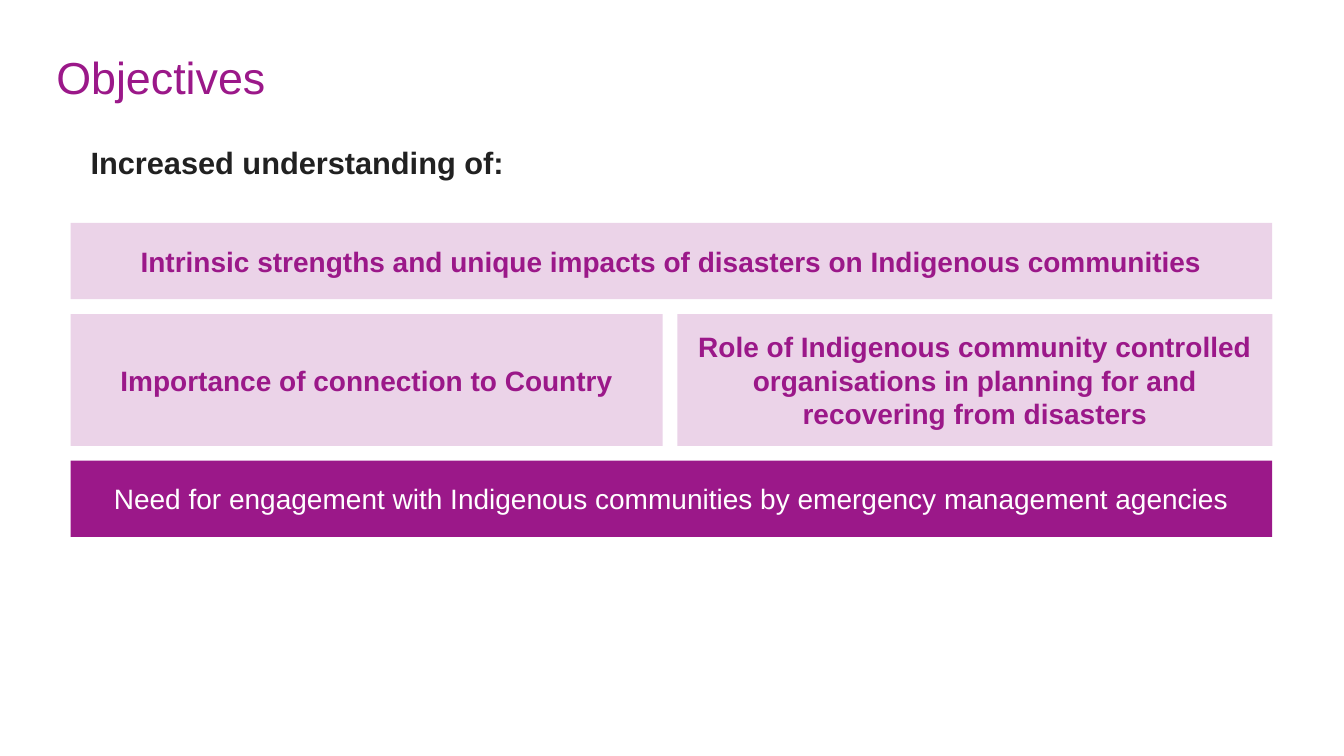
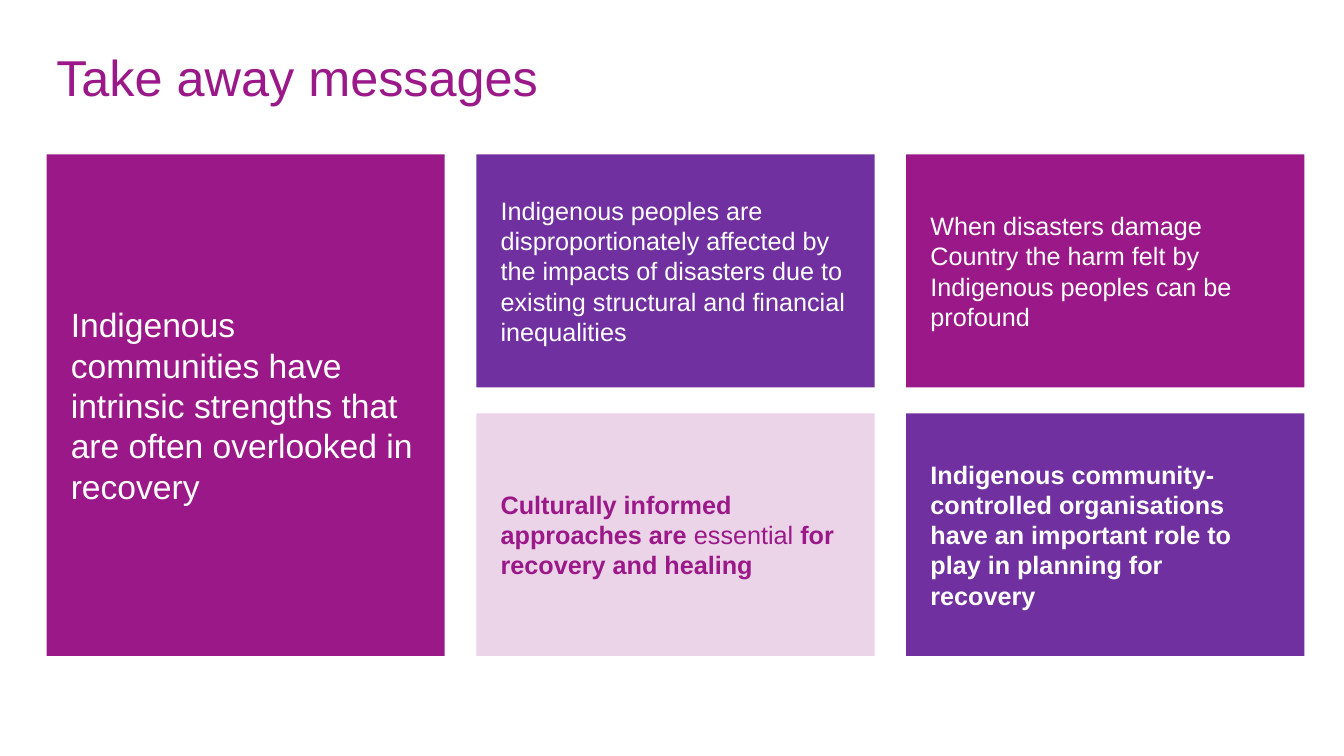
from pptx import Presentation
from pptx.dml.color import RGBColor
from pptx.enum.shapes import MSO_SHAPE
from pptx.enum.text import MSO_ANCHOR, MSO_AUTO_SIZE, PP_ALIGN
from pptx.util import Pt

RECT = MSO_SHAPE.RECTANGLE
MIDDLE = MSO_ANCHOR.MIDDLE
LEFT, CENTER = PP_ALIGN.LEFT, PP_ALIGN.CENTER
NO_FIT = MSO_AUTO_SIZE.NONE
FONT = "Arial"
MAGENTA, PURPLE, PINK = "9B1889", "7030A0", "EBD3E8"
WHITE, DARK = "FFFFFF", "212121"


def write(tf, text, size=20, color=WHITE, bold=False, align=LEFT,
          margins=(7.2, 3.6, 7.2, 3.6)):
    tf.word_wrap = True
    tf.auto_size = NO_FIT
    tf.margin_left, tf.margin_top, tf.margin_right, tf.margin_bottom = map(Pt, margins)
    p = tf.paragraphs[0]
    p.alignment = align
    for i, piece in enumerate(text.split("*")):
        r = p.add_run()
        r.text = piece
        r.font.name = FONT
        r.font.size = Pt(size)
        r.font.bold = bold if i % 2 == 0 else not bold
        r.font.color.rgb = RGBColor.from_string(color)
    return p


def add_box(s, x, y, w, h, fill, text, **fmt):
    sp = s.shapes.add_shape(RECT, Pt(x), Pt(y), Pt(w), Pt(h))
    sp.shadow.inherit = False
    sp.fill.solid()
    sp.fill.fore_color.rgb = RGBColor.from_string(fill)
    sp.line.fill.background()
    sp.text_frame.vertical_anchor = MIDDLE
    write(sp.text_frame, text, **fmt)


prs = Presentation()
prs.slide_width, prs.slide_height = Pt(960), Pt(540)

slides = []
for title, size in (("Objectives", 32), ("Take away messages", 36)):
    s = prs.slides.add_slide(prs.slide_layouts[5])
    sp = s.shapes.title
    sp.left, sp.top, sp.width, sp.height = Pt(33), Pt(16), Pt(898), Pt(82)
    sp.text_frame.vertical_anchor = MIDDLE
    p = write(sp.text_frame, title, size=size, color=MAGENTA)
    p.line_spacing = 0.9
    slides.append(s)
objectives, messages = slides

sp = objectives.shapes.add_textbox(Pt(57.6), Pt(99.4), Pt(814), Pt(34))
write(sp.text_frame, "Increased understanding of:", size=22, color=DARK, bold=True)

left, full, half, gap = 50.4, 858.4, 423, 10.5
right = left + half + gap
rows = [
    (54.6, [(left, full, PINK, "Intrinsic strengths and unique impacts of disasters on Indigenous communities")]),
    (94.2, [(left, half, PINK, "Importance of connection to Country"),
            (right, left + full - right, PINK,
             "Role of Indigenous community controlled organisations in planning for "
             "and recovering from disasters")]),
    (54.6, [(left, full, MAGENTA, "Need for engagement with Indigenous communities by emergency management agencies")]),
]
y = 159.2
for h, boxes in rows:
    for x, w, fill, text in boxes:
        light = fill == PINK
        add_box(objectives, x, y, w, h, fill, text, bold=light, align=CENTER,
                color=MAGENTA if light else WHITE)
    y += h + gap

x0, pitch, width = 33.3, 307, 284.4
top, upper, lower, bottom = 110.2, 166.5, 173.2, 468.5
pad = (17.3, 8.6, 17.3, 8.6)
wide_pad = (17.3, 8.6, 24, 8.6)
cards = [
    (0, top, bottom - top, MAGENTA,
     "Indigenous communities have intrinsic strengths that are often overlooked in recovery",
     dict(size=24, margins=pad)),
    (1, top, upper, PURPLE,
     "Indigenous peoples are disproportionately affected by the impacts of disasters "
     "due to existing structural and financial inequalities",
     dict(size=18, margins=pad)),
    (2, top, upper, MAGENTA,
     "When disasters damage Country the harm felt by Indigenous peoples can be profound",
     dict(size=18, margins=pad)),
    (1, bottom - lower, lower, PINK,
     "Culturally informed approaches are *essential* for recovery and healing",
     dict(size=18, margins=pad, color=MAGENTA, bold=True)),
    (2, bottom - lower, lower, PURPLE,
     "Indigenous community-controlled organisations have an important role to play "
     "in planning for recovery",
     dict(size=18, margins=wide_pad, bold=True)),
]
for col, y, h, fill, text, fmt in cards:
    add_box(messages, x0 + col * pitch, y, width, h, fill, text, **fmt)

prs.save("out.pptx")
